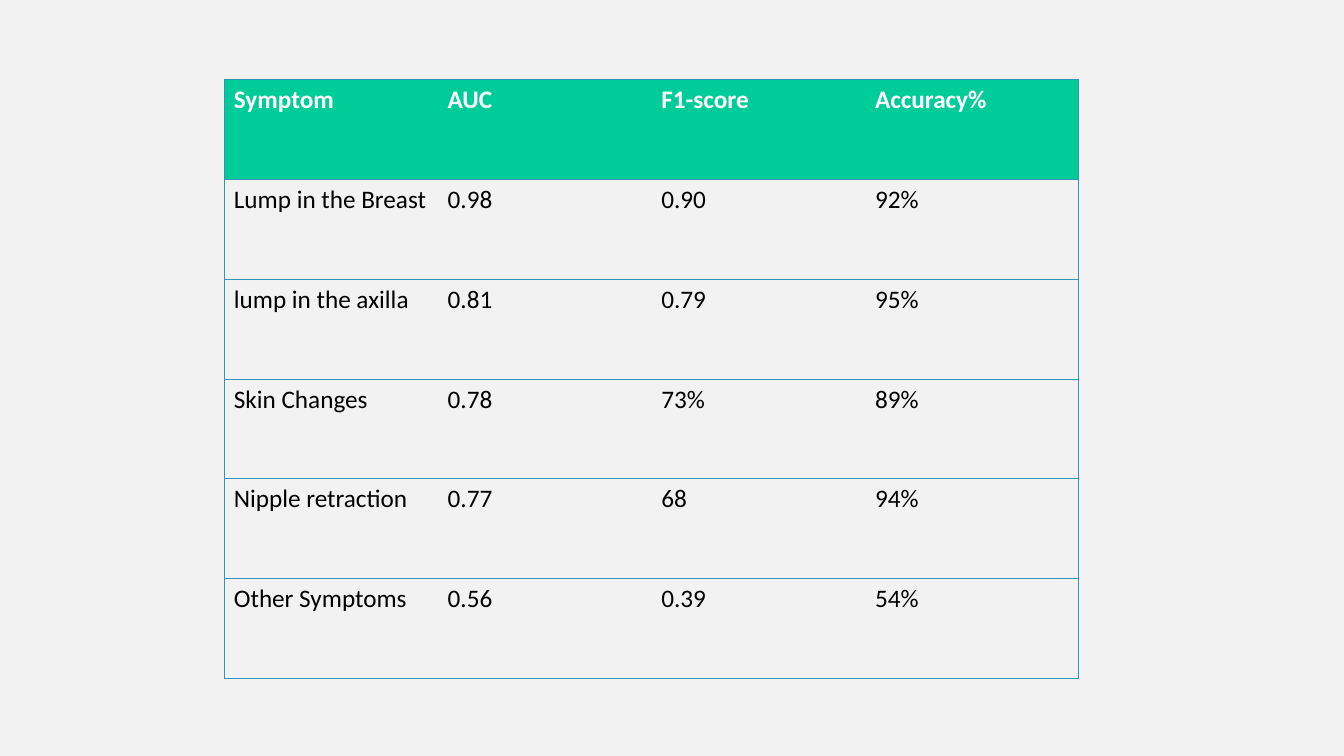
from lxml import etree
from pptx import Presentation
from pptx.dml.color import RGBColor
from pptx.oxml.ns import qn
from pptx.util import Inches, Pt

BLANK_LAYOUT = 6
SYMPTOM_SCORES = [
    ["Symptom", "AUC", "F1-score", "Accuracy%"],
    ["Lump in the Breast", "0.98", "0.90", "92%"],
    ["lump in the axilla", "0.81", "0.79", "95%"],
    ["Skin Changes", "0.78", "73%", "89%"],
    ["Nipple retraction", "0.77", "68", "94%"],
    ["Other Symptoms", "0.56", "0.39", "54%"],
]


def color(value):
    return RGBColor.from_string(value)


def write(frame, text, font="Calibri", size=18, ink="000000", bold=False):
    span = frame.paragraphs[0].add_run()
    span.text = text
    span.font.name = font
    span.font.size = Pt(size)
    span.font.color.rgb = color(ink)
    span.font.bold = bold


class SlidePainter:
    paper = "F2F2F2"
    accent = "00CC99"
    header_ink = "FFFFFF"
    rule = "3494BA"
    rule_width = 0.5
    column = 2.12
    row = 0.99

    def __init__(self, page):
        self.page = page

    def background(self):
        fill = self.page.background.fill
        fill.solid()
        fill.fore_color.rgb = color(self.paper)

    def border(self, cell, side, visible):
        properties = cell._tc.get_or_add_tcPr()
        line = etree.SubElement(properties, qn(f"a:ln{side}"), w=str(Pt(self.rule_width)))
        if visible:
            fill = etree.SubElement(line, qn("a:solidFill"))
            etree.SubElement(fill, qn("a:srgbClr"), val=self.rule)
        else:
            etree.SubElement(line, qn("a:noFill"))

    def cell(self, cell, text, header, first, last):
        for side, visible in (("L", first), ("R", last), ("T", True), ("B", True)):
            self.border(cell, side, visible)
        if header:
            cell.fill.solid()
            cell.fill.fore_color.rgb = color(self.accent)
            write(cell.text_frame, text, ink=self.header_ink, bold=True)
        else:
            cell.fill.background()
            write(cell.text_frame, text)

    def table(self, rows, left, top):
        row_count, column_count = len(rows), len(rows[0])
        table = self.page.shapes.add_table(
            row_count, column_count, Inches(left), Inches(top),
            Inches(column_count * self.column), Inches(row_count * self.row),
        ).table
        table.horz_banding = False
        for row_index, values in enumerate(rows):
            for column_index, text in enumerate(values):
                self.cell(
                    table.cell(row_index, column_index), text,
                    header=row_index == 0,
                    first=column_index == 0,
                    last=column_index == column_count - 1,
                )


def main():
    deck = Presentation()
    deck.slide_width = Inches(13.33)
    deck.slide_height = Inches(7.5)
    painter = SlidePainter(deck.slides.add_slide(deck.slide_layouts[BLANK_LAYOUT]))
    painter.background()
    painter.table(SYMPTOM_SCORES, left=2.22, top=0.79)
    deck.save("out.pptx")


if __name__ == "__main__":
    main()
